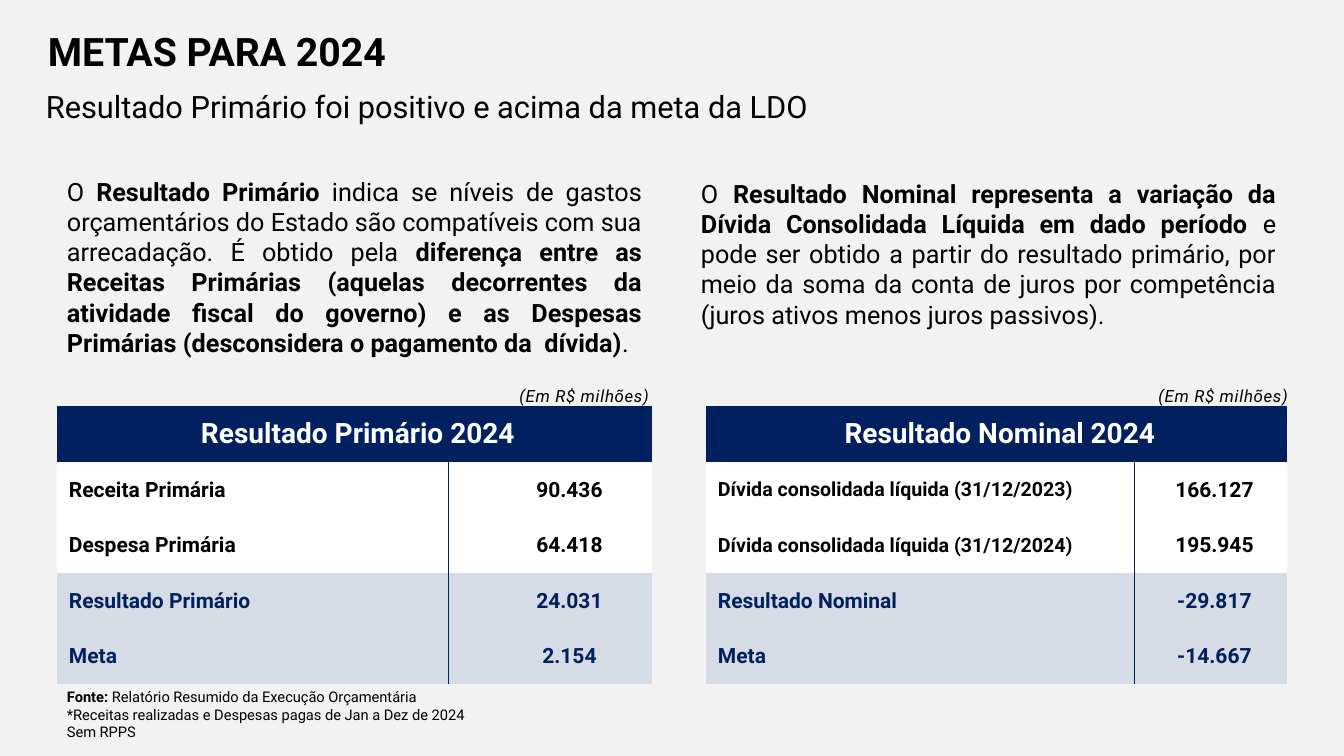
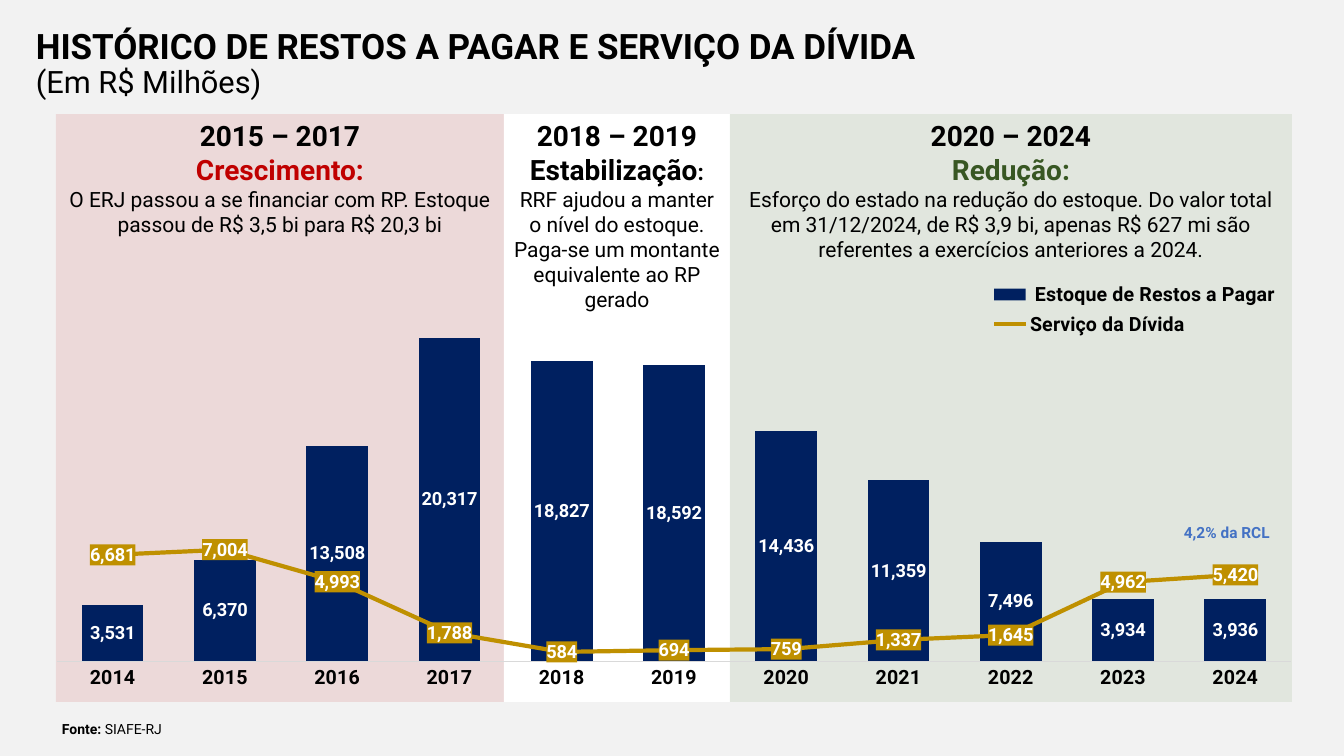
from copy import deepcopy

from lxml.etree import SubElement
from pptx import Presentation
from pptx.chart.data import CategoryChartData
from pptx.dml.color import RGBColor
from pptx.enum.chart import XL_CHART_TYPE as ChartType, XL_LABEL_POSITION as LabelPos
from pptx.enum.chart import XL_LEGEND_POSITION as LegendPos, XL_MARKER_STYLE as Marker, XL_TICK_MARK as Tick
from pptx.enum.shapes import MSO_CONNECTOR as Connector, MSO_SHAPE as Shape
from pptx.enum.text import MSO_ANCHOR as Anchor, PP_ALIGN as Align
from pptx.oxml import parse_xml
from pptx.oxml.ns import nsdecls, qn
from pptx.util import Pt

SCALE = 914400 / 100.8
FONT = "Roboto"
PLAIN_TABLE = "{2D5ABB26-0587-4C30-8999-92F81FD0307C}"
COLORS = {
    "page": "F2F2F2", "black": "000000", "white": "FFFFFF", "navy": "002060", "pale": "D6DCE5",
    "gold": "BF9000", "red": "C00000", "green": "548235", "forest": "385723", "blue": "4472C4",
    "axis": "D9D9D9",
}

GOALS_TITLE = "METAS PARA 2024"
GOALS_SUBTITLE = "Resultado Primário foi positivo e acima da meta da LDO"
UNIT = "(Em R$ milhões)"
RESULTS = [
    {
        "text": "O **Resultado Primário **indica se níveis de gastos orçamentários do Estado são compatíveis com "
                "sua arrecadação. É obtido pela **diferença entre as Receitas Primárias (aquelas decorrentes da "
                "atividade fiscal do governo) e as Despesas Primárias (desconsidera o pagamento da  dívida)**.",
        "text_box": (57, 171, 595, 224), "unit_left": 448,
        "left": 57, "columns": (430, 165), "divider": 448,
        "header": " Resultado Primário 2024", "item_size": 15,
        "rows": [("Receita Primária", "90.436"), ("Despesa Primária", "64.418"),
                 ("Resultado Primário", "24.031"), ("Meta", "2.154")],
    },
    {
        "text": "O **Resultado Nominal representa a variação da Dívida Consolidada Líquida em dado período **e pode "
                "ser obtido a partir do resultado primário, por meio da soma da conta de juros por competência "
                "(juros ativos menos juros passivos).",
        "text_box": (691, 173, 595, 163), "unit_left": 1087,
        "left": 706, "columns": (436, 145), "divider": 1134,
        "header": " Resultado Nominal 2024", "item_size": 14,
        "rows": [("Dívida consolidada líquida (31/12/2023)", "166.127"),
                 ("Dívida consolidada líquida (31/12/2024)", "195.945"),
                 ("Resultado Nominal", "-29.817"), ("Meta", "-14.667")],
    },
]
TABLE_TOP, TABLE_HEIGHT, TABLE_ROWS = 406, 278, 5
GOALS_SOURCE = ["**Fonte: **Relatório Resumido da Execução Orçamentária",
                "*Receitas realizadas e Despesas pagas de Jan a Dez de 2024", "Sem RPPS"]

HISTORY_TITLE = "HISTÓRICO DE RESTOS A PAGAR E SERVIÇO DA DÍVIDA"
HISTORY_UNIT = "(Em R$ Milhões)"
HISTORY_SOURCE = "**Fonte: **SIAFE-RJ"
SHARE = "4,2% da RCL"
BANDS_LEFT, BANDS_TOP, BANDS_HEIGHT = 56, 114, 588
BANDS = [
    (448, "red", 10, "2015 – 2017", "Crescimento", "red", 20,
     "O ERJ passou a se financiar com RP. Estoque passou de R$ 3,5 bi para R$ 20,3 bi"),
    (226, "white", 100, "2018 – 2019", "Estabilização", "black", 16,
     "RRF ajudou a manter o nível do estoque. Paga-se um montante equivalente ao RP gerado"),
    (562, "green", 10, "2020 – 2024", "Redução", "forest", 20,
     "Esforço do estado na redução do estoque. Do valor total em 31/12/2024, de R$ 3,9 bi, "
     "apenas R$ 627 mi são referentes a exercícios anteriores a 2024."),
]
YEARS = [str(year) for year in range(2014, 2025)]
STOCK = (" Estoque de Restos a Pagar ",
         [3531, 6370, 13508, 20317, 18827, 18592, 14436, 11359, 7496, 3934, 3936])
SERVICE = ("Serviço da Dívida", [6681, 7004, 4993, 1788, 584, 694, 759, 1337, 1645, 4962, 5420])


def px(length):
    return round(length * SCALE)


def box(*lengths):
    return [px(length) for length in lengths]


def rgb(name):
    return RGBColor.from_string(COLORS[name])


def paint(fill, color):
    fill.solid()
    fill.fore_color.rgb = rgb(color)


def style(font, size, color="black", bold=False):
    font.name, font.size, font.bold = FONT, Pt(size), bold
    font.color.rgb = rgb(color)


def write(frame, lines, align=Align.LEFT, spacing=None):
    """Fill a frame with (text, size, color, bold) lines; ** switches bold on and off."""
    frame.word_wrap = True
    for index, (text, size, color, bold) in enumerate(lines):
        paragraph = frame.paragraphs[0] if index == 0 else frame.add_paragraph()
        paragraph.alignment = align
        if spacing:
            paragraph.line_spacing = spacing
        style(paragraph.font, size, color, bold)
        for part, words in enumerate(text.split("**")):
            if words:
                run = paragraph.add_run()
                run.text = words
                if part % 2:
                    run.font.bold = True
    return frame.paragraphs


def add_text(slide, place, lines, anchor=Anchor.TOP, **layout):
    frame = slide.shapes.add_textbox(*box(*place)).text_frame
    frame.vertical_anchor = anchor
    return write(frame, lines, **layout)


def add_result(slide, result):
    add_text(slide, result["text_box"], [(result["text"], 18, "black", False)], align=Align.JUSTIFY)
    unit, = add_text(slide, (result["unit_left"], 377, 211, 42), [(UNIT, 12, "black", False)],
                     align=Align.RIGHT, spacing=1.2)
    unit.font.italic = True
    unit.runs[0]._r.get_or_add_rPr().set("spc", "50")

    place = box(result["left"], TABLE_TOP, sum(result["columns"]), TABLE_HEIGHT)
    table = slide.shapes.add_table(TABLE_ROWS, 2, *place).table
    table._tbl.tblPr.find(qn("a:tableStyleId")).text = PLAIN_TABLE
    for column, width in zip(table.columns, result["columns"]):
        column.width = px(width)
    table.cell(0, 0).merge(table.cell(0, 1))
    fill_cell(table.cell(0, 0), result["header"], 20, "white", "navy", Align.CENTER)
    for number, (item, value) in enumerate(result["rows"], 1):
        is_detail = number < 3
        colors = ("black", "white") if is_detail else ("navy", "pale")
        item_size = result["item_size"] if is_detail else 15
        fill_cell(table.cell(number, 0), item, item_size, *colors, Align.LEFT)
        fill_cell(table.cell(number, 1), value, 15, *colors, Align.CENTER)

    x, top = result["divider"], TABLE_TOP + TABLE_HEIGHT / TABLE_ROWS
    divider = slide.shapes.add_connector(Connector.STRAIGHT, *box(x, top, x, TABLE_TOP + TABLE_HEIGHT))
    divider.line.color.rgb = rgb("navy")
    divider.line.width = Pt(0.5)
    SubElement(divider._element.spPr, qn("a:effectLst"))


def fill_cell(cell, text, size, color, background, align):
    paint(cell.fill, background)
    cell.vertical_anchor = Anchor.MIDDLE
    cell.margin_left = px(12 if align == Align.LEFT else 1)
    cell.margin_right = cell.margin_top = px(1)
    cell.margin_bottom = 0
    write(cell.text_frame, [(text, size, color, True)], align)


def add_bands(slide):
    left = BANDS_LEFT
    for width, tint, opacity, period, phase, phase_color, colon_size, text in BANDS:
        band = slide.shapes.add_shape(Shape.RECTANGLE, *box(left, BANDS_TOP, width, BANDS_HEIGHT))
        band.shadow.inherit = False
        paint(band.fill, tint)
        band.line.fill.background()
        if opacity < 100:
            tint_xml = band._element.spPr.find(".//" + qn("a:srgbClr"))
            SubElement(tint_xml, qn("a:alpha")).set("val", str(opacity * 1000))
        band.text_frame.vertical_anchor = Anchor.TOP
        lines = [(period, 20, "black", True), (phase, 20, phase_color, True), (text, 15, "black", False)]
        colon = write(band.text_frame, lines, Align.CENTER)[1].add_run()
        colon.text = ":"
        colon.font.size = Pt(colon_size)
        left += width


def set_layout(parent, index, x, y, w, h, target=""):
    for old in parent.findall(qn("c:layout")):
        parent.remove(old)
    sizes = "".join(f'<c:{key} val="{value}"/>' for key, value in zip("xywh", (x, y, w, h)))
    parent.insert(index, parse_xml(
        f'<c:layout {nsdecls("c")}><c:manualLayout>{target}<c:xMode val="edge"/><c:yMode val="edge"/>'
        f'{sizes}</c:manualLayout></c:layout>'))


def split_line_plot(chart):
    bars = chart.plots[0]._element
    lines = parse_xml(f'<c:lineChart {nsdecls("c")}><c:grouping val="standard"/><c:varyColors val="0"/>'
                      '</c:lineChart>')
    service = bars.findall(qn("c:ser"))[1]
    for bar_only in service.findall(qn("c:invertIfNegative")):
        service.remove(bar_only)
    lines.append(service)
    SubElement(lines, qn("c:marker")).set("val", "1")
    for axis in bars.findall(qn("c:axId")):
        lines.append(deepcopy(axis))
    bars.addnext(lines)


def label_values(series):
    labels = series.data_labels
    labels.show_value = True
    labels.number_format, labels.number_format_is_linked = "#,##0", False
    labels.position = LabelPos.CENTER
    style(labels.font, 13, "white", True)
    return labels._element


def add_history_chart(slide):
    data = CategoryChartData(number_format="#,##0")
    data.categories = YEARS
    for name, values in (STOCK, SERVICE):
        data.add_series(name, values)
    place = box(BANDS_LEFT, 240, sum(band[0] for band in BANDS), 463)
    chart = slide.shapes.add_chart(ChartType.COLUMN_CLUSTERED, *place, data).chart
    chart.has_title = False
    style(chart.font, 14, bold=True)
    split_line_plot(chart)
    bar_plot, line_plot = chart.plots
    bar_plot.gap_width = 82
    bar_plot.vary_by_categories = False

    stock, service = bar_plot.series[0], line_plot.series[0]
    paint(stock.format.fill, "navy")
    label_values(stock)
    service.smooth = False
    service.marker.style = Marker.NONE
    service.format.line.color.rgb = rgb("gold")
    service.format.line.width = Pt(3)
    label_values(service).find(qn("c:txPr")).addprevious(parse_xml(
        f'<c:spPr {nsdecls("c", "a")}><a:solidFill><a:srgbClr val="{COLORS["gold"]}"/></a:solidFill></c:spPr>'))

    amounts, years = chart.value_axis, chart.category_axis
    amounts.minimum_scale, amounts.maximum_scale = 0, 25000
    amounts.has_major_gridlines = False
    amounts.visible = False
    years.major_tick_mark = years.minor_tick_mark = Tick.NONE
    years.format.line.color.rgb = rgb("axis")
    years.format.line.width = Pt(0.75)
    style(years.tick_labels.font, 14, bold=True)

    chart.has_legend = True
    chart.legend.position = LegendPos.RIGHT
    chart.legend.include_in_layout = False
    style(chart.legend.font, 14, bold=True)
    set_layout(chart.legend._element, 1, 0.75, 0.08, 0.25, 0.14)
    set_layout(bar_plot._element.getparent(), 0, 0, 0.05, 1, 0.86, '<c:layoutTarget val="inner"/>')


def build_goals(slide):
    add_text(slide, (38, 14, 791, 80), [(GOALS_TITLE, 28, "black", True)], Anchor.MIDDLE, spacing=0.9)
    add_text(slide, (36, 73, 1270, 59), [(GOALS_SUBTITLE, 22, "black", False)], Anchor.MIDDLE, spacing=1.2)
    for result in RESULTS:
        add_result(slide, result)
    add_text(slide, (57, 683, 478, 64), [(line, 10.5, "black", False) for line in GOALS_SOURCE])


def build_history(slide):
    add_bands(slide)
    add_text(slide, (26, 16, 1013, 98),
             [(HISTORY_TITLE, 25, "black", True), (HISTORY_UNIT, 22, "black", False)],
             Anchor.MIDDLE, spacing=0.9)
    add_text(slide, (52, 716, 540, 30), [(HISTORY_SOURCE, 10, "black", False)])
    add_text(slide, (1174, 518, 117, 29), [(SHARE, 11, "blue", True)])
    add_history_chart(slide)


def main():
    deck = Presentation()
    deck.slide_width, deck.slide_height = box(1344, 756)
    paint(deck.slide_master.background.fill, "page")
    for build in (build_goals, build_history):
        build(deck.slides.add_slide(deck.slide_layouts[6]))
    deck.save("out.pptx")


if __name__ == "__main__":
    main()
